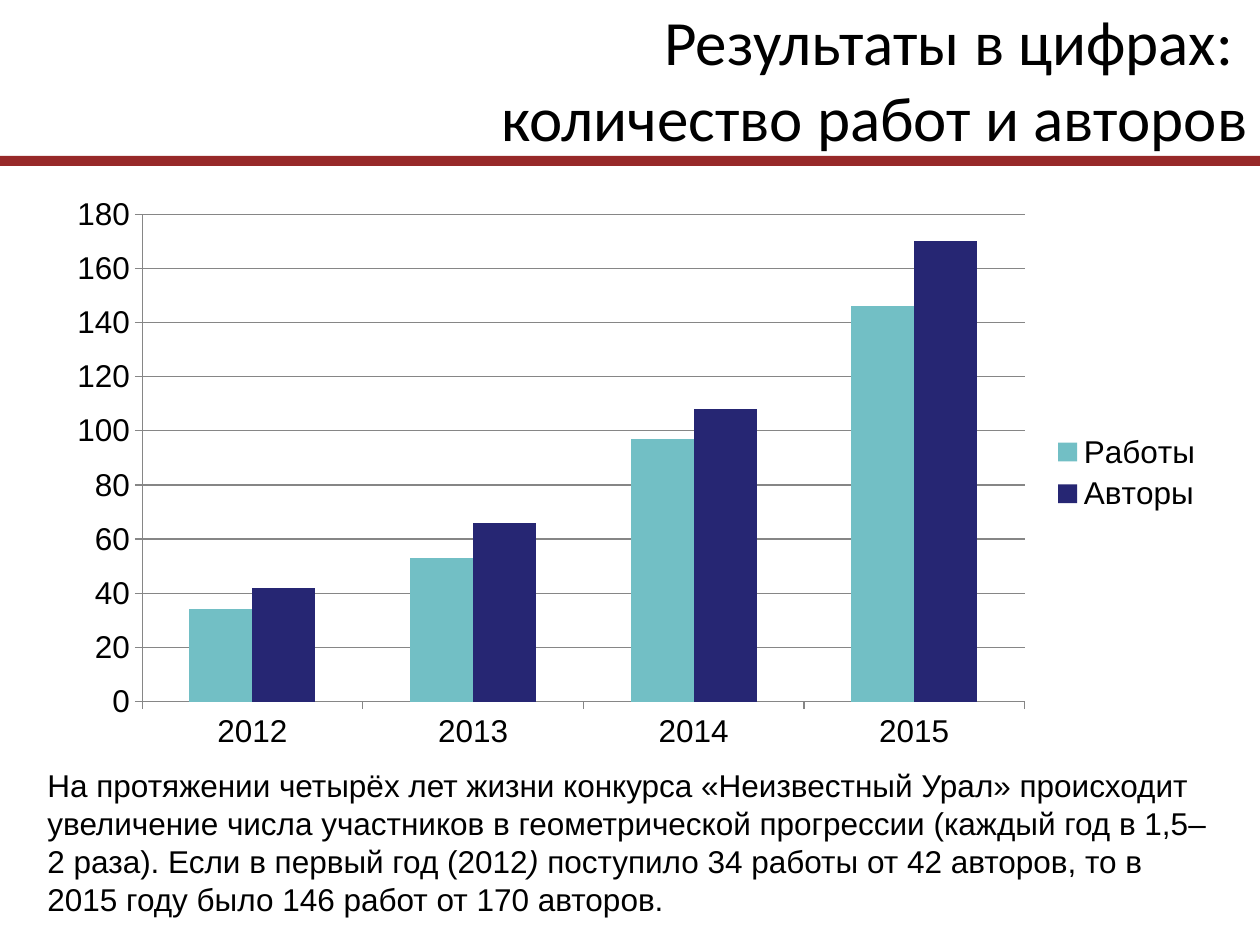
import pptx
import pptx.chart.data
import pptx.dml.color
import pptx.enum.chart
import pptx.enum.shapes
import pptx.enum.text
import pptx.util

EMU_PER_PX = 914400 // 126
BLACK = "000000"
AXIS_GRAY = "868686"
YEARS = ["2012", "2013", "2014", "2015"]
SERIES = [
    ("Работы", [34, 53, 97, 146], "72BFC5"),
    ("Авторы", [42, 66, 108, 170], "262673"),
]
SUMMARY = [
    ("На протяжении четырёх лет жизни конкурса «Неизвестный Урал» происходит "
     "увеличение числа участников в геометрической прогрессии (каждый год в "
     "1,5–2 раза). Если в первый год (2012", False),
    (") ", True),
    ("поступило 34 работы от 42 авторов, то в 2015 году было 146 работ "
     "от 170 авторов.", False),
]


def px(*lengths):
    """Turn pixel lengths into EMU."""
    return [pptx.util.Emu(length * EMU_PER_PX) for length in lengths]


def color(value):
    """Turn a hex string into a colour."""
    return pptx.dml.color.RGBColor.from_string(value)


def style_font(font, name, size):
    """Set the typeface, point size and black colour of a font."""
    font.name = name
    font.size = pptx.util.Pt(size)
    font.color.rgb = color(BLACK)


def add_text(slide, box, runs, name, size, alignment, anchor):
    """Add a wrapping text box of one paragraph made of (text, italic) runs."""
    text_frame = slide.shapes.add_textbox(*px(*box)).text_frame
    text_frame.word_wrap = True
    text_frame.vertical_anchor = anchor
    paragraph = text_frame.paragraphs[0]
    paragraph.alignment = alignment
    for line_number, line in enumerate(runs):
        if line_number:
            paragraph.add_line_break()
        for text, italic in line:
            run = paragraph.add_run()
            run.text = text
            style_font(run.font, name, size)
            run.font.italic = italic


def add_bar(slide, box, fill):
    """Add a plain filled rectangle."""
    shape = slide.shapes.add_shape(
        pptx.enum.shapes.MSO_SHAPE.RECTANGLE, *px(*box))
    shape.shadow.inherit = False
    shape.fill.solid()
    shape.fill.fore_color.rgb = color(fill)
    shape.line.fill.background()


def style_axis(axis):
    """Give an axis a gray line and outside tick marks."""
    axis.format.line.color.rgb = color(AXIS_GRAY)
    axis.major_tick_mark = pptx.enum.chart.XL_TICK_MARK.OUTSIDE
    axis.minor_tick_mark = pptx.enum.chart.XL_TICK_MARK.NONE


def add_column_chart(slide, box):
    """Add the clustered columns of works and authors by year."""
    chart_data = pptx.chart.data.CategoryChartData()
    chart_data.categories = YEARS
    for name, values, _ in SERIES:
        chart_data.add_series(name, values)
    chart = slide.shapes.add_chart(
        pptx.enum.chart.XL_CHART_TYPE.COLUMN_CLUSTERED, *px(*box),
        chart_data).chart
    style_font(chart.font, "Arial", 18)
    chart.has_title = False
    chart.has_legend = True
    chart.legend.position = pptx.enum.chart.XL_LEGEND_POSITION.RIGHT
    chart.legend.include_in_layout = False
    style_axis(chart.category_axis)
    style_axis(chart.value_axis)
    chart.value_axis.minimum_scale = 0
    chart.value_axis.maximum_scale = 180
    chart.value_axis.major_unit = 20
    chart.value_axis.has_major_gridlines = True
    chart.value_axis.major_gridlines.format.line.color.rgb = color(AXIS_GRAY)
    plot = chart.plots[0]
    plot.gap_width = 150
    plot.overlap = 0
    plot.vary_by_categories = False
    for series, (_, _, fill) in zip(plot.series, SERIES):
        series.format.fill.solid()
        series.format.fill.fore_color.rgb = color(fill)


def main():
    """Build the slide and save it."""
    presentation = pptx.Presentation()
    presentation.slide_width, presentation.slide_height = px(1260, 945)
    slide = presentation.slides.add_slide(presentation.slide_layouts[6])
    align = pptx.enum.text.PP_ALIGN
    anchor = pptx.enum.text.MSO_ANCHOR
    title = [[("Результаты в цифрах: ", False)],
             [("количество работ и авторов", False)]]
    add_text(slide, (126, 0, 1134, 157), title, "Calibri", 36,
             align.RIGHT, anchor.MIDDLE)
    add_column_chart(slide, (54, 185, 1162, 576))
    add_bar(slide, (0, 156, 1260, 10), "972929")
    add_text(slide, (35, 760, 1191, 165), [SUMMARY], "Arial", 18,
             align.LEFT, anchor.TOP)
    presentation.save("out.pptx")


if __name__ == "__main__":
    main()
